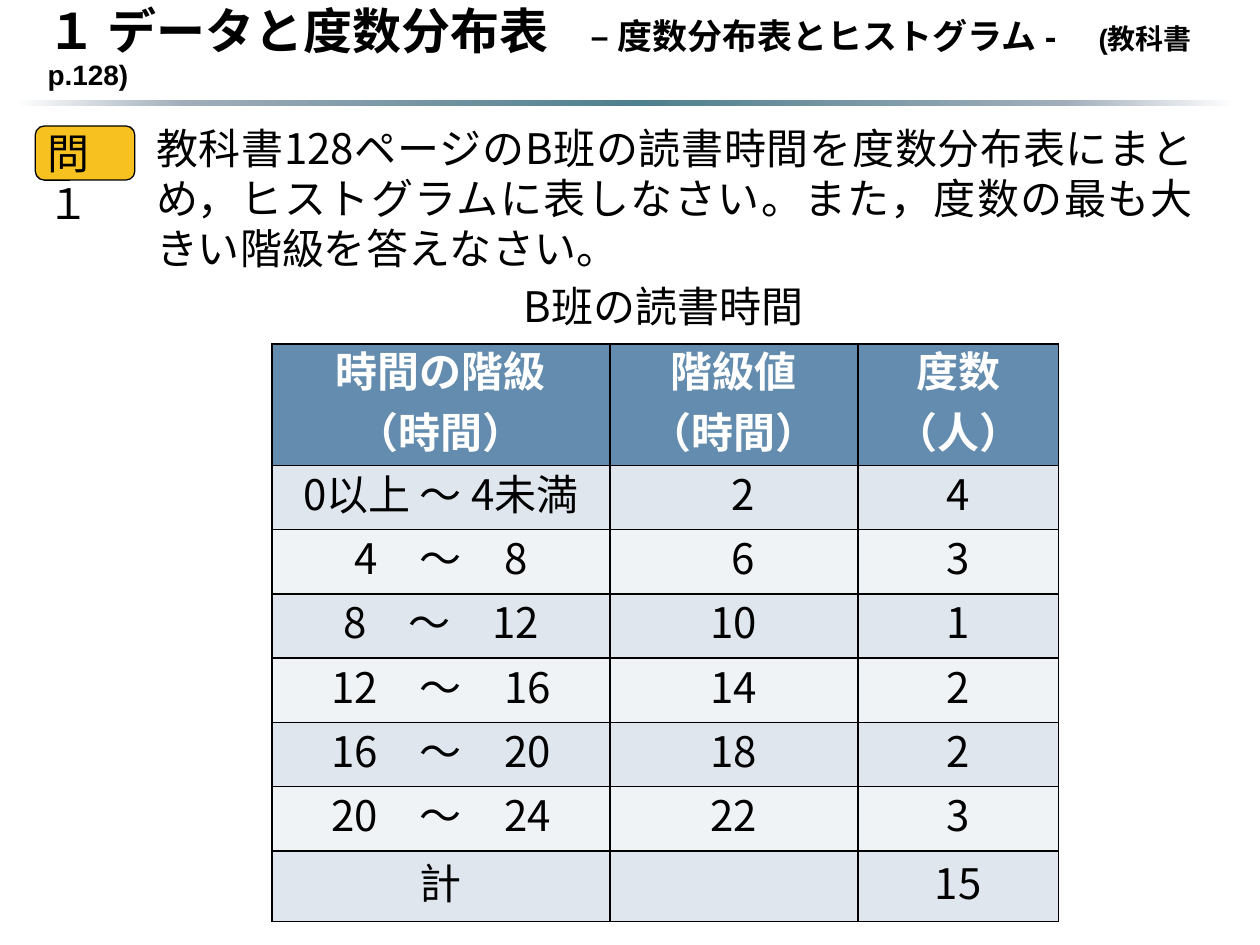
"""Build a maths slide with a frequency table of reading times."""
from lxml import etree
from pptx import Presentation
from pptx.dml.color import RGBColor
from pptx.enum import shapes, text
from pptx.oxml import parse_xml
from pptx.oxml.ns import nsdecls, qn
from pptx.util import Inches, Pt

theme = {
    "font": "Noto Sans CJK JP", "head": "Arial", "size": 24,
    "ink": "000000", "paper": "FFFFFF", "badge": "F7C120",
    "top": "638CAE", "bands": ("DFE6ED", "F0F3F6"),
    "fade": ((0, "FFFFFF"), (14, "A0ADB9"), (51, "4F808D"), (86, "A1AEBA"), (100, "FFFFFF")),
}
mid, wide = text.PP_ALIGN.CENTER, text.PP_ALIGN.JUSTIFY

deck = Presentation()
deck.slide_width, deck.slide_height = Inches(10), Inches(7.5)
slide = deck.slides.add_slide(deck.slide_layouts[6])


def grid(*cells):
    """Turn counts of 0.1 inch grid steps into lengths."""
    return [Inches(n / 10) for n in cells]


def write(frame, words, size=theme["size"], font=theme["font"], ink=theme["ink"],
          bold=False, align=None, lead=1.2 * theme["size"], gap=0, indent=0):
    """Write lines of text, each a string or a list of (string, size) runs."""
    frame.word_wrap = True
    for row, line in enumerate(words):
        para = frame.paragraphs[0] if row == 0 else frame.add_paragraph()
        para.alignment, para.line_spacing, para.space_before = align, Pt(lead), Pt(gap)
        if indent:
            para._p.get_or_add_pPr().set("indent", str(Inches(indent)))
        for part, pts in [(line, size)] if isinstance(line, str) else line:
            run = para.add_run()
            run.text = part
            run.font.size, run.font.bold, run.font.name = Pt(pts), bold, font
            run.font.color.rgb = RGBColor.from_string(ink)
            east = etree.SubElement(run._r.get_or_add_rPr(), qn("a:ea"))
            east.set("typeface", theme["font"])


rule = slide.shapes.add_shape(shapes.MSO_SHAPE.RECTANGLE, *grid(1.2, 7.9, 96.8, 0.5))
rule.shadow.inherit = False
rule.line.fill.background()
rule.fill.gradient()
rule.fill.gradient_angle = 0
stops = rule._element.spPr.find(qn("a:gradFill")).find(qn("a:gsLst"))
for old in list(stops):
    stops.remove(old)
for pos, tint in theme["fade"]:
    stops.append(parse_xml(
        f'<a:gs {nsdecls("a")} pos="{pos * 1000}"><a:srgbClr val="{tint}"/></a:gs>'))

title = slide.shapes.add_textbox(*grid(2.8, 0.9, 93.6, 6.6)).text_frame
title.vertical_anchor = text.MSO_ANCHOR.BOTTOM
title.margin_bottom = Inches(0.03)
write(title, [[("１ データと度数分布表", 28), ("　", 24), ("– 度数分布表とヒストグラム -", 20),
               ("　", 24), ("(教科書 p.128)", 16)]], font=theme["head"], bold=True, lead=18)

rows = [
    (["時間の階級", "（時間）"], ["階級値", "（時間）"], ["度数", "（人）"]),
    (["0以上 ～ 4未満"], ["2"], ["4"]),
    (["4　～　8"], ["6"], ["3"]),
    (["8　～　12"], ["10"], ["1"]),
    (["12　～　16"], ["14"], ["2"]),
    (["16　～　20"], ["18"], ["2"]),
    (["20　～　24"], ["22"], ["3"]),
    (["計"], [""], ["15"]),
]
table = slide.shapes.add_table(len(rows), 3, *grid(21.6, 27.3, 62.4, 45.8)).table
table.horz_banding = False
for col, size in zip(table.columns, grid(26.8, 19.7, 15.9)):
    col.width = size
for row, size in zip(table.rows, grid(9.6, *[5.1] * 6, 5.6)):
    row.height = size
for r, row in enumerate(rows):
    for c, words in enumerate(row):
        cell = table.cell(r, c)
        cell.margin_left = cell.margin_right = Inches(0.09)
        cell.margin_top = cell.margin_bottom = Inches(0.04)
        cell.vertical_anchor = text.MSO_ANCHOR.MIDDLE
        cell.fill.solid()
        tint = theme["bands"][(r - 1) % 2] if r else theme["top"]
        cell.fill.fore_color.rgb = RGBColor.from_string(tint)
        inset = c == 1 and r in (1, 2)
        write(cell.text_frame, words, ink=theme["ink" if r else "paper"], bold=r == 0,
              align=None if inset else mid, gap=6, indent=0.88 if inset else 0)
        for n, side in enumerate("LRTB"):
            cell._tc.get_or_add_tcPr().insert(n, parse_xml(
                f'<a:ln{side} {nsdecls("a")} w="{Pt(1)}"><a:solidFill>'
                f'<a:srgbClr val="{theme["ink"]}"/></a:solidFill></a:ln{side}>'))

badge = slide.shapes.add_shape(shapes.MSO_SHAPE.ROUNDED_RECTANGLE, *grid(2.8, 10, 7.9, 4.3))
badge.shadow.inherit = False
badge.fill.solid()
badge.fill.fore_color.rgb = RGBColor.from_string(theme["badge"])
badge.line.color.rgb = RGBColor.from_string(theme["ink"])
badge.line.width = Pt(0.75)

for spot, words, align in (
    ((40.6, 21.8, 30.3, 5.1), "B班の読書時間", None),
    ((2.8, 9.6, 7.9, 5), "問１", None),
    ((11.4, 9.2, 84.3, 13.1), "教科書128ページのB班の読書時間を度数分布表にまとめ，"
     "ヒストグラムに表しなさい。また，度数の最も大きい階級を答えなさい。", wide),
):
    write(slide.shapes.add_textbox(*grid(*spot)).text_frame, [words], align=align)

deck.save("out.pptx")
